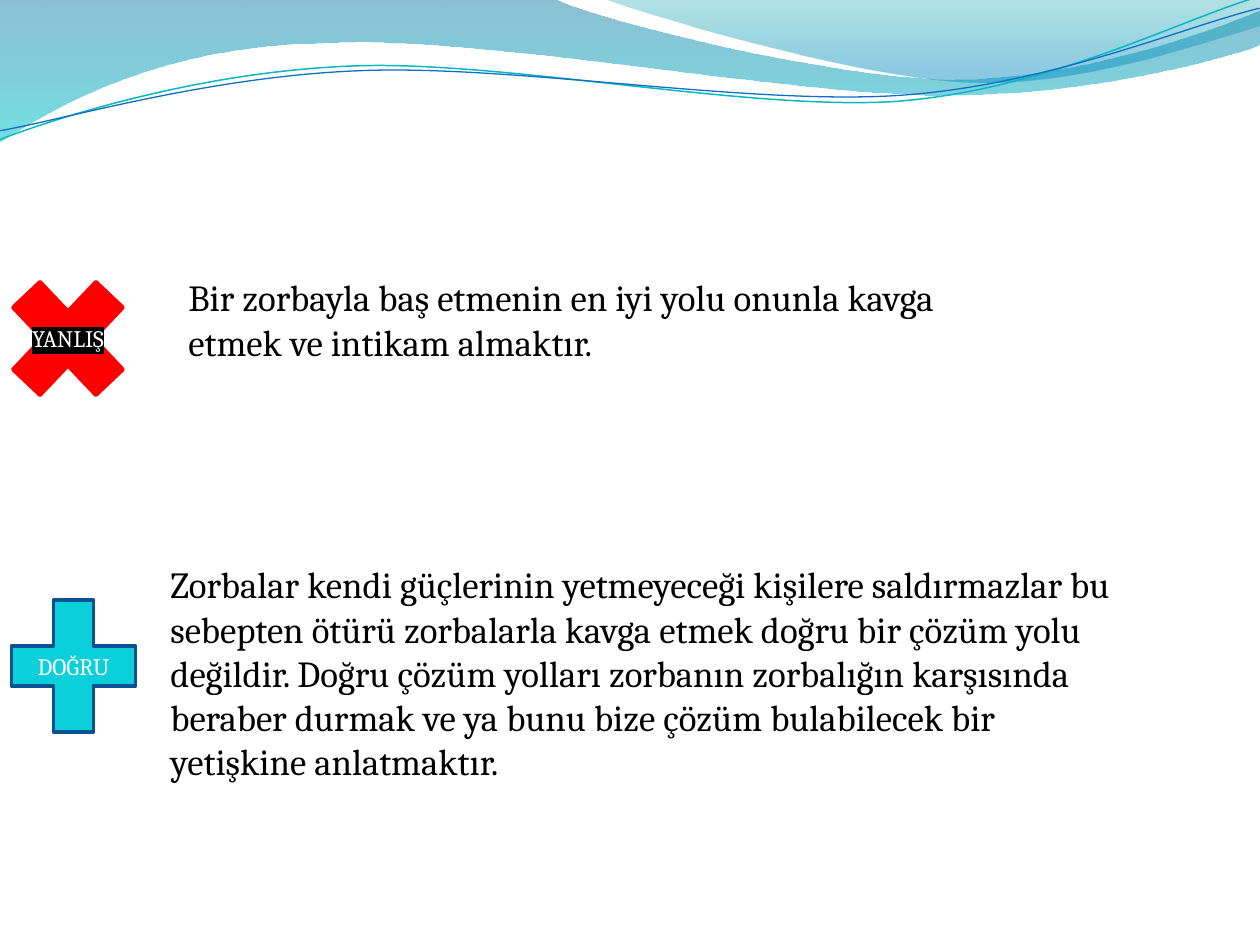
from itertools import chain

from lxml import etree
from pptx import Presentation
from pptx import util as u
from pptx.dml.color import RGBColor
from pptx.enum import shapes, text
from pptx.oxml.ns import qn

SCALE = 914400 / 126
FONT = "Cambria"
CURVE_ROTATION = 357.3
BLACK = RGBColor(0x00, 0x00, 0x00)
WHITE = RGBColor(0xFF, 0xFF, 0xFF)
RED = RGBColor(0xFF, 0x00, 0x00)
CYAN = RGBColor(0x0B, 0xD0, 0xD9)
NAVY = RGBColor(0x0B, 0x52, 0x92)
TEAL_LINE = RGBColor(0x0A, 0xB8, 0xBF)
BLUE_LINE = RGBColor(0x0F, 0x6F, 0xC6)
DEEP_BLUE = RGBColor(0x00, 0x74, 0xA1)
AQUA = RGBColor(0x00, 0xC6, 0xCF)
DEEP_TEAL = RGBColor(0x00, 0xA1, 0xA9)
SKY_BLUE = RGBColor(0x00, 0x8B, 0xBF)

BROAD_WAVE = [
    [(0, 0)], [(554, -1)],
    [(600, 21), (837, 79), (955, 79)],
    [(1075, 79), (1207, 33), (1260, 11)],
    [(1261, 45)],
    [(1235, 55), (1096, 96), (940, 95)],
    [(784, 95), (481, 35), (324, 43)],
    [(163, 45), (58, 105), (-1, 142)],
]
RIGHT_WAVE = [
    [(604, -1)],
    [(641, 14), (859, 78), (969, 82)],
    [(1079, 87), (1211, 40), (1260, 26)],
    [(1260, 0)],
]
TEAL_CURVE = [
    [(-3, 110)],
    [(58, 90), (200, 52), (350, 53)],
    [(499, 53), (745, 117), (896, 114)],
    [(1049, 109), (1184, 45), (1260, 27)],
]
BLUE_CURVE = [
    [(-2, 101)],
    [(57, 94), (207, 57), (357, 58)],
    [(509, 58), (750, 112), (902, 108)],
    [(1052, 104), (1188, 52), (1262, 38)],
]


def px(value):
    return u.Emu(round(value * SCALE))


def bend(outline, segments):
    lines = iter(list(outline._element.spPr.iter(qn("a:lnTo"))))
    for segment in segments[1:]:
        sides = [next(lines) for _ in segment]
        if len(sides) == 3:
            curve = etree.Element(qn("a:cubicBezTo"))
            sides[0].addprevious(curve)
            for side in sides:
                curve.append(side[0])
                side.getparent().remove(side)


def add_outline(page, left, top, segments, close):
    corners = [(px(left + x), px(top + y)) for x, y in chain(*segments)]
    builder = page.shapes.build_freeform(*corners[0])
    builder.add_line_segments(corners[1:], close=close)
    outline = builder.convert_to_shape()
    bend(outline, segments)
    outline.shadow.inherit = False
    return outline


def add_wave(page, left, top, segments, stops):
    wave = add_outline(page, left, top, segments, True)
    wave.line.fill.background()
    wave.fill.gradient()
    wave.fill.gradient_angle = 270
    for stop, (position, color, opacity) in zip(wave.fill.gradient_stops, stops):
        stop.position = position
        stop.color.rgb = color
    colors = wave._element.spPr.iter(qn("a:srgbClr"))
    for element, (position, color, opacity) in zip(colors, stops):
        etree.SubElement(element, qn("a:alpha"), val=str(opacity * 1000))


def add_curve(page, left, top, segments, color, width):
    curve = add_outline(page, left, top, segments, False)
    curve.rotation = CURVE_ROTATION
    curve.fill.background()
    curve.line.color.rgb = color
    curve.line.width = u.Pt(width)


def add_header(page, left, top):
    add_wave(page, left, top, BROAD_WAVE, [(0, DEEP_BLUE, 45), (1, AQUA, 55)])
    add_wave(page, left, top, RIGHT_WAVE, [(0, DEEP_TEAL, 30), (0.8, SKY_BLUE, 45)])
    add_curve(page, left, top, TEAL_CURVE, TEAL_LINE, 0.85)
    add_curve(page, left, top, BLUE_CURVE, BLUE_LINE, 0.75)


def write(para, words, size, color):
    span = para.add_run()
    span.text = words
    span.font.size = u.Pt(size)
    span.font.color.rgb = color
    span.font.name = FONT
    return span


def highlight(span, color):
    mark = etree.Element(qn("a:highlight"))
    etree.SubElement(mark, qn("a:srgbClr"), val=str(color))
    span.font._element.find(qn("a:solidFill")).addnext(mark)


def add_sign(page, box, kind, fill, line, words):
    sign = page.shapes.add_shape(kind, *map(px, box))
    sign.shadow.inherit = False
    sign.fill.solid()
    sign.fill.fore_color.rgb = fill
    sign.line.color.rgb = line
    sign.line.width = u.Pt(2)
    etree.SubElement(sign.line._get_or_add_ln(), qn("a:round"))
    sign.text_frame.vertical_anchor = text.MSO_ANCHOR.MIDDLE
    para = sign.text_frame.paragraphs[0]
    para.alignment = text.PP_ALIGN.CENTER
    return write(para, words, 13.5, WHITE)


def add_statement(page, box, words):
    frame = page.shapes.add_textbox(*map(px, box)).text_frame
    frame.word_wrap = True
    frame.auto_size = text.MSO_AUTO_SIZE.SHAPE_TO_FIT_TEXT
    write(frame.paragraphs[0], words, 21, BLACK)


def main():
    deck = Presentation()
    deck.slide_width, deck.slide_height = px(1260), px(945)
    page = deck.slides.add_slide(deck.slide_layouts[6])
    add_header(page, 0, 0)
    add_statement(page, (176, 269, 853, 102),
                  "Bir zorbayla baş etmenin en iyi yolu onunla kavga etmek ve "
                  "intikam almaktır.")
    wrong = add_sign(page, (-12, 254, 160, 169), shapes.MSO_SHAPE.MATH_MULTIPLY,
                     RED, RED, "YANLIŞ")
    highlight(wrong, BLACK)
    add_sign(page, (-11, 576, 169, 180), shapes.MSO_SHAPE.MATH_PLUS,
             CYAN, NAVY, "DOĞRU")
    add_statement(page, (158, 556, 975, 236),
                  "Zorbalar kendi güçlerinin yetmeyeceği kişilere saldırmazlar bu "
                  "sebepten ötürü zorbalarla kavga etmek doğru bir çözüm yolu "
                  "değildir. Doğru çözüm yolları zorbanın zorbalığın karşısında "
                  "beraber durmak ve ya bunu bize çözüm bulabilecek bir yetişkine "
                  "anlatmaktır.")
    deck.save("out.pptx")


if __name__ == "__main__":
    main()
